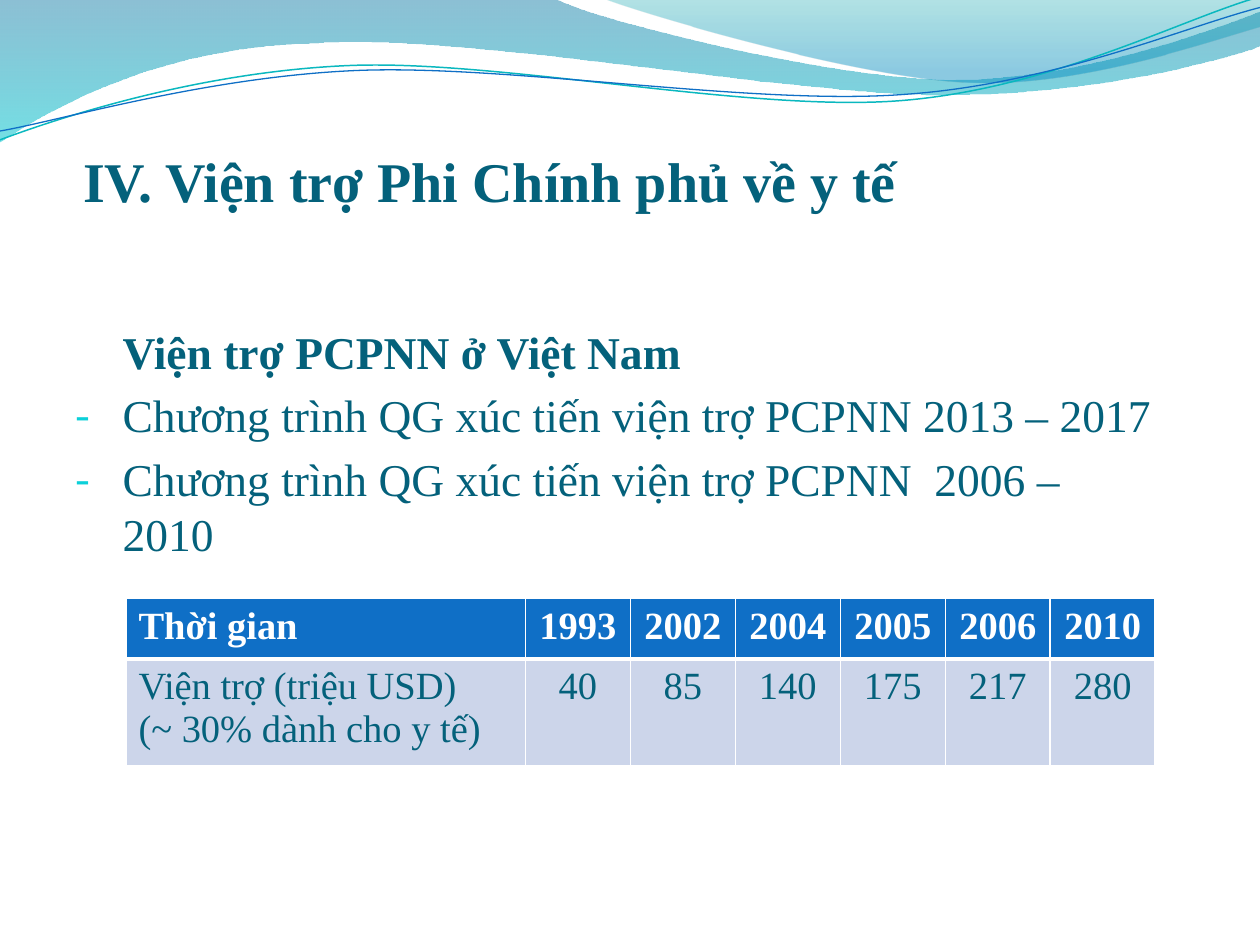
from math import cos, radians, sin

from lxml import etree
from pptx import Presentation
from pptx.dml.color import RGBColor
from pptx.enum.text import MSO_ANCHOR, PP_ALIGN
from pptx.oxml import parse_xml
from pptx.oxml.ns import qn
from pptx.util import Inches, Pt

BOTTOM, CENTER, LEFT = MSO_ANCHOR.BOTTOM, PP_ALIGN.CENTER, PP_ALIGN.LEFT
FONT = "Times New Roman"
NS = "http://schemas.openxmlformats.org/drawingml/2006/main"
COLORS = {"ink": "04617B", "white": "FFFFFF", "head": "0F6FC6",
          "row": "CCD5EA", "bullet": "0BD0D9", "teal": "0AB8BF"}

TITLE = "IV. Viện trợ Phi Chính phủ về y tế"
HEADING = "Viện trợ PCPNN ở Việt Nam"
ITEMS = ["Chương trình QG xúc tiến viện trợ PCPNN 2013 – 2017",
         "Chương trình QG xúc tiến viện trợ PCPNN  2006 – 2010"]
TABLE = [["Thời gian", "1993", "2002", "2004", "2005", "2006", "2010"],
         ["Viện trợ (triệu USD)\n(~ 30% dành cho y tế)",
          "40", "85", "140", "175", "217", "280"]]
WIDTHS = [3.17] + [5 / 6] * 6
HEIGHTS = [0.48, 0.85]

# A step of two numbers is a straight line, one of six a Bezier curve.
# Gradient stops: position %, colour, opacity %.
BANDS = [
    ([(0, 0), (4.4, -0.01), (4.76, 0.17, 6.64, 0.63, 7.58, 0.63),
      (8.53, 0.63, 9.58, 0.26, 10, 0.09), (10.01, 0.36),
      (9.83, 0.44, 8.7, 0.76, 7.46, 0.75),
      (6.22, 0.75, 3.82, 0.28, 2.57, 0.34),
      (1.29, 0.36, 0.46, 0.83, -0.01, 1.13), (0, 0)],
     [(0, "0074A1", 45), (100, "00C6CF", 55)]),
    ([(4.79, -0.01), (5.09, 0.11, 6.82, 0.62, 7.69, 0.65),
      (8.56, 0.69, 9.61, 0.32, 10, 0.21), (10, 0), (4.79, -0.01)],
     [(0, "00A1A9", 30), (80, "008BBF", 45)]),
]
TILT = -2.7
# Steps, centre of the tilt, line colour and width.
WAVES = [
    ([(0, 1.11), (0.48, 0.93, 1.58, 0.57, 2.77, 0.52),
      (3.95, 0.47, 5.93, 0.89, 7.13, 0.8),
      (8.33, 0.71, 9.38, 0.15, 9.98, -0.02)], (4.99, 0.58), "teal", 0.85),
    ([(0, 1.04), (0.47, 0.96, 1.64, 0.61, 2.83, 0.56),
      (4.03, 0.51, 5.97, 0.84, 7.17, 0.75),
      (8.36, 0.67, 9.41, 0.21, 10, 0.06)], (5, 0.59), "head", 0.75),
]


def color(name):
    return RGBColor.from_string(COLORS[name])


def pairs(step):
    return list(zip(step[::2], step[1::2]))


def level(step, center):
    """Undo the tilt of a step, so that the shape can be rotated instead."""
    angle, (cx, cy) = radians(-TILT), center
    flat = []
    for x, y in pairs(step):
        dx, dy = x - cx, y - cy
        flat += [cx + dx * cos(angle) - dy * sin(angle),
                 cy + dx * sin(angle) + dy * cos(angle)]
    return flat


def outline(slide, steps, close):
    """Draw the steps as a freeform, with each six-number step a true curve."""
    points = [point for step in steps for point in pairs(step)]
    pen = slide.shapes.build_freeform(*points[0], scale=Inches(1))
    # The builder rounds its input, so it is given whole EMU at scale 1.
    pen = slide.shapes.build_freeform(*[Inches(v) for v in points[0]], scale=1)
    pen.add_line_segments([tuple(map(Inches, p)) for p in points[1:]], close=close)
    shape = pen.convert_to_shape()
    shape.shadow.inherit = False
    lines = iter(list(shape.element.spPr.iter(qn("a:lnTo"))))
    for step in steps[1:]:
        first = next(lines)
        if len(step) == 6:
            first.tag = qn("a:cubicBezTo")
            for _ in range(2):
                extra = next(lines)
                first.append(extra[0])
                extra.getparent().remove(extra)
    return shape


def add_band(slide, steps, stops):
    shape = outline(slide, steps, True)
    shape.line.fill.background()
    marks = "".join(
        f'<a:gs pos="{pos * 1000}"><a:srgbClr val="{tint}">'
        f'<a:alpha val="{alpha * 1000}"/></a:srgbClr></a:gs>'
        for pos, tint, alpha in stops)
    grad = parse_xml(f'<a:gradFill xmlns:a="{NS}" rotWithShape="1"><a:gsLst>{marks}'
                     '</a:gsLst><a:lin ang="5400000" scaled="1"/></a:gradFill>')
    shape.element.spPr.find(qn("a:custGeom")).addnext(grad)


def add_wave(slide, steps, center, name, width):
    shape = outline(slide, [level(step, center) for step in steps], False)
    shape.rotation = TILT
    shape.fill.background()
    shape.line.color.rgb = color(name)
    shape.line.width = Pt(width)


def style(par, size, name, bold=False, align=LEFT):
    font = par.font
    font.name, font.size, font.bold = FONT, Pt(size), bold
    font.color.rgb = color(name)
    par.alignment = align


def add_frame(slide, left, top, width, height):
    box = slide.shapes.add_textbox(*map(Inches, (left, top, width, height)))
    box.text_frame.word_wrap = True
    return box.text_frame


def add_bullet(props):
    tint = etree.SubElement(props, qn("a:buClr"))
    etree.SubElement(tint, qn("a:srgbClr"), val=COLORS["bullet"])
    etree.SubElement(props, qn("a:buSzPct"), val="95000")
    etree.SubElement(props, qn("a:buFont"), typeface=FONT)
    etree.SubElement(props, qn("a:buChar"), char="-")


def add_body(slide):
    frame = add_frame(slide, 0.5, 2.08, 8.75, 4.42)
    frame.margin_top = Inches(0.49)
    frame.text = "\n".join([HEADING] + ITEMS)
    for i, par in enumerate(frame.paragraphs):
        style(par, 26, "ink", bold=i == 0)
        par.space_before = Pt(5.2)
        props = par._p.get_or_add_pPr()
        props.set("marL", str(Pt(27)))
        props.set("indent", str(Pt(-27) if i else 0))
        if i:
            # Bullet marks must stand before the default run properties.
            default = props.find(qn("a:defRPr"))
            add_bullet(props)
            props.append(default)


def set_borders(cell, widths):
    props = cell._tc.get_or_add_tcPr()
    for i, (side, width) in enumerate(zip(("lnL", "lnR", "lnT", "lnB"), widths)):
        props.insert(i, parse_xml(
            f'<a:{side} xmlns:a="{NS}" w="{Pt(width)}"><a:solidFill>'
            f'<a:srgbClr val="{COLORS["white"]}"/></a:solidFill></a:{side}>'))


def add_grid(slide):
    table = slide.shapes.add_table(
        len(HEIGHTS), len(WIDTHS), Inches(1), Inches(4.75),
        Inches(sum(WIDTHS)), Inches(sum(HEIGHTS))).table
    for col, width in zip(table.columns, WIDTHS):
        col.width = Inches(width)
    looks = [("head", "white", True, (1, 1, 1, 3)),
             ("row", "ink", False, (1, 1, 3, 1))]
    for r, (row, (fill, ink, bold, edges)) in enumerate(zip(TABLE, looks)):
        table.rows[r].height = Inches(HEIGHTS[r])
        for c, text in enumerate(row):
            cell = table.cell(r, c)
            cell.text = text
            cell.fill.solid()
            cell.fill.fore_color.rgb = color(fill)
            set_borders(cell, edges)
            for par in cell.text_frame.paragraphs:
                style(par, 22, ink, bold, CENTER if c else LEFT)


def main():
    deck = Presentation()
    deck.slide_width, deck.slide_height = Inches(10), Inches(7.5)
    slide = deck.slides.add_slide(deck.slide_layouts[6])
    for band in BANDS:
        add_band(slide, *band)
    for wave in WAVES:
        add_wave(slide, *wave)
    title = add_frame(slide, 0.66, 0.92, 8.17, 0.78)
    title.margin_left = title.margin_right = title.margin_bottom = 0
    title.vertical_anchor = BOTTOM
    title.text = TITLE
    style(title.paragraphs[0], 32, "ink", bold=True)
    add_body(slide)
    add_grid(slide)
    deck.save("out.pptx")


if __name__ == "__main__":
    main()
